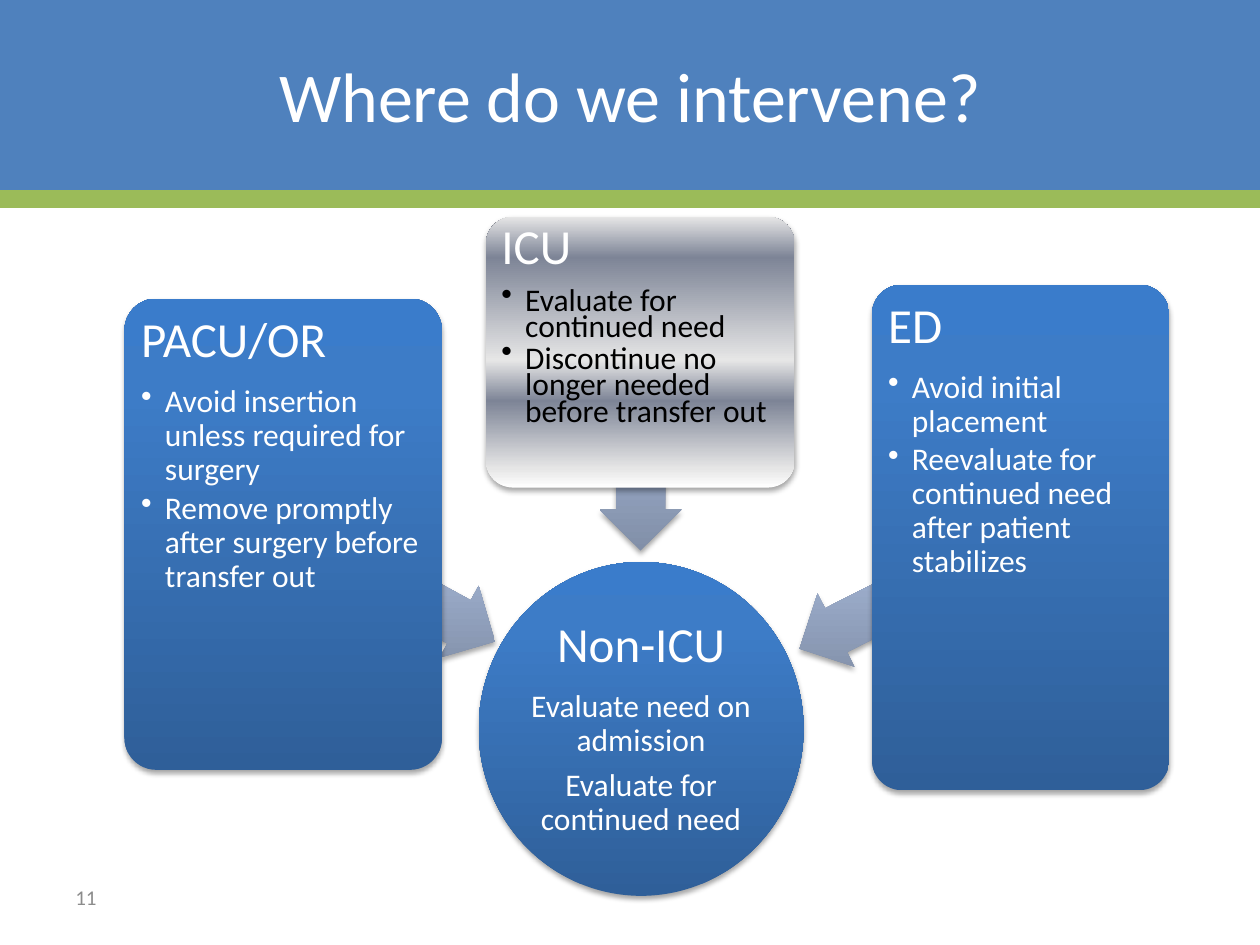
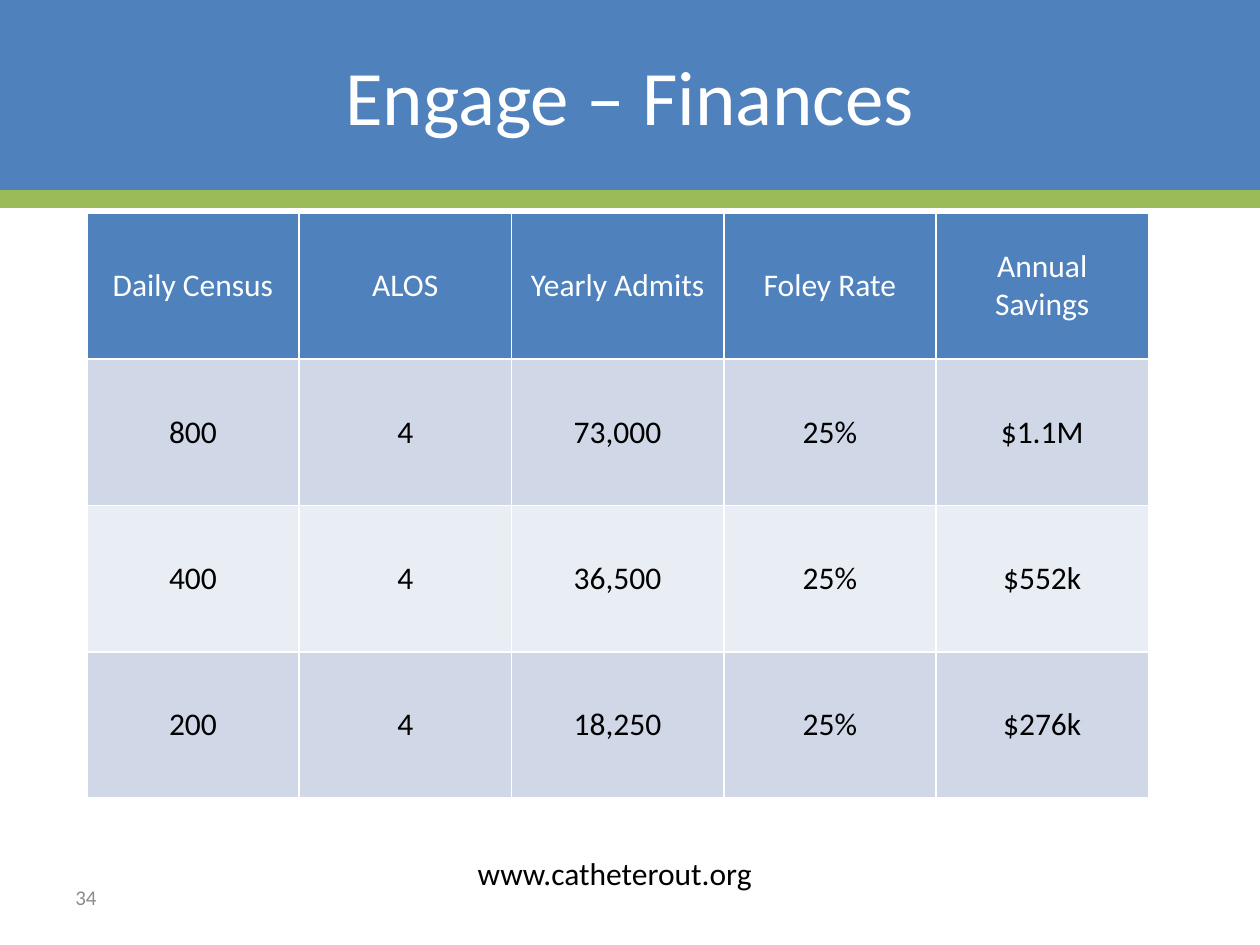
import pptx
import pptx.dml.color
import pptx.enum.shapes
import pptx.enum.text
import pptx.oxml
import pptx.oxml.ns
import pptx.util
from pptx.util import Cm, Pt

SHAPE = pptx.enum.shapes.MSO_SHAPE
ALIGN = pptx.enum.text.PP_ALIGN
ANCHOR = pptx.enum.text.MSO_ANCHOR

# Shared look
FONT = "Calibri"
WHITE, BLACK, GREY = "FFFFFF", "000000", "8C8C8C"
BAND_BLUE, BAND_GREEN = "4F81BD", "9BBB59"
ROW_FILLS = ["D0D8E8", "E9EDF4"]
SLIDE_WIDTH, SLIDE_HEIGHT, BAND_HEIGHT = Cm(25.4), Cm(19.05), Cm(4.01)

# Gradients run from bottom to top: (position in percent, colour)
BLUE = [(0, "2F5F99"), (80, "3D7CC7"), (100, "3A7CCB")]
STEEL = [(0, "818FA8"), (80, "A7B9DA"), (100, "A7BADC")]
SILVER = [(0, "FFFFFF"), (7, "E6E6E6"), (32, "7D8496"),
          (47, "E6E6E6"), (85, "7D8496"), (100, "E6E6E6")]

# Slide content; boxes are left, top, width, height in cm
INTERVENE = {"title": "Where do we intervene?", "title_size": 40, "number": "11"}
FINANCES = {"title": "Engage – Finances", "title_size": 44, "number": "34"}

TARGET = {
    "box": (9.65, 11.33, 6.55, 6.73), "heading": "Non-ICU",
    "items": ["Evaluate need on admission", "Evaluate for continued need"],
}
UNITS = [
    {"box": (2.51, 6.02, 6.4, 9.5), "heading": "PACU/OR",
     "items": ["Avoid insertion unless required for surgery",
               "Remove promptly after surgery before transfer out"],
     "arrow": (5.64, 11, 4.62, 1.65), "rotation": 208.6},
    {"box": (9.8, 4.37, 6.22, 5.46), "heading": "ICU",
     "items": ["Evaluate for continued need",
               "Discontinue no longer needed before transfer out"],
     "arrow": (10.92, 8.28, 3.99, 1.65), "rotation": 270,
     "gradient": SILVER, "item_color": BLACK, "line_spacing": 0.7},
    {"box": (17.58, 5.74, 5.99, 10.19), "heading": "ED",
     "items": ["Avoid initial placement",
               "Reevaluate for continued need after patient stabilizes"],
     "arrow": (15.85, 11.13, 4.98, 1.65), "rotation": 333.2},
]

SAVINGS = [
    ["Daily Census", "ALOS", "Yearly Admits", "Foley Rate", "Annual Savings"],
    ["800", "4", "73,000", "25%", "$1.1M"],
    ["400", "4", "36,500", "25%", "$552k"],
    ["200", "4", "18,250", "25%", "$276k"],
]
COLUMN_WIDTH, ROW_HEIGHT = Cm(4.28), Cm(2.95)
WEBSITE = "www.catheterout.org"


def rgb(color):
    return pptx.dml.color.RGBColor.from_string(color)


def xml(markup):
    """Parse one element of the drawing namespace."""
    tag, rest = markup[:-2].split(" ", 1) if markup.endswith("/>") else markup.split(" ", 1)
    end = "/>" if markup.endswith("/>") else ""
    return pptx.oxml.parse_xml(f"{tag} {pptx.oxml.ns.nsdecls('a')} {rest}{end}")


def format_paragraph(paragraph, size, color, align=ALIGN.LEFT):
    paragraph.alignment = align
    for run in paragraph.runs:
        run.font.name = FONT
        run.font.size = Pt(size)
        run.font.color.rgb = rgb(color)


def add_label(slide, text, box, size, color, align=ALIGN.LEFT, anchor=ANCHOR.TOP):
    frame = slide.shapes.add_textbox(*map(Cm, box)).text_frame
    frame.word_wrap = True
    frame.vertical_anchor = anchor
    frame.text = text
    format_paragraph(frame.paragraphs[0], size, color, align)


def add_gradient_shape(slide, kind, box, gradient, adjustments=()):
    """Add a borderless shape with an upward gradient and a soft shadow."""
    shape = slide.shapes.add_shape(kind, *map(Cm, box))
    for index, value in enumerate(adjustments):
        shape.adjustments[index] = value
    shape.line.fill.background()
    shape.fill.gradient()
    shape.fill.gradient_angle = 90
    properties = shape.element.spPr
    properties.find(pptx.oxml.ns.qn("a:gradFill")).set("rotWithShape", "0")
    stops = properties.find(".//" + pptx.oxml.ns.qn("a:gsLst"))
    stops.clear()
    for position, color in gradient:
        stops.append(xml(f'<a:gs pos="{position * 1000}"><a:srgbClr val="{color}"/></a:gs>'))
    shape.shadow.inherit = False
    properties.find(pptx.oxml.ns.qn("a:effectLst")).append(xml(
        '<a:outerShdw blurRad="39400" dist="22900" dir="5400000" rotWithShape="0">'
        '<a:srgbClr val="000000"><a:alpha val="35000"/></a:srgbClr></a:outerShdw>'))
    return shape


def fill_text(shape, unit, inset, align, anchor, bulleted):
    """Write a heading and its items into a shape."""
    frame = shape.text_frame
    frame.word_wrap = True
    frame.vertical_anchor = anchor
    frame.margin_left = frame.margin_right = Cm(inset)
    frame.margin_top = frame.margin_bottom = Cm(inset)
    frame.text = "\n".join([unit["heading"], *unit["items"]])
    for index, paragraph in enumerate(frame.paragraphs):
        is_item = index > 0
        size = 18 if is_item else 28
        color = unit.get("item_color", WHITE) if is_item else WHITE
        if is_item and bulleted:
            properties = paragraph._p.get_or_add_pPr()
            properties.set("marL", str(Cm(0.48)))
            properties.set("indent", str(-Cm(0.48)))
            properties.append(xml('<a:buChar char="•"/>'))
        paragraph.line_spacing = unit.get("line_spacing", 0.9)
        paragraph.space_after = Pt(size * (0.15 if is_item and bulleted else 0.35))
        format_paragraph(paragraph, size, color, align)


def prepare_layout(presentation, layout):
    """Put the title place and the two-colour band on the layout."""
    title = layout.placeholders[0]
    title.left, title.top, title.width, title.height = 0, 0, SLIDE_WIDTH, Cm(3.81)
    slide = presentation.slides[0]
    band = slide.shapes.add_shape(SHAPE.RECTANGLE, 0, 0, SLIDE_WIDTH, BAND_HEIGHT)
    band.fill.solid()
    band.fill.fore_color.rgb = rgb(BAND_BLUE)
    band.line.fill.background()
    band.shadow.inherit = False
    rule = slide.shapes.add_connector(
        pptx.enum.shapes.MSO_CONNECTOR.STRAIGHT, 0, BAND_HEIGHT, SLIDE_WIDTH, BAND_HEIGHT)
    rule.line.color.rgb = rgb(BAND_GREEN)
    rule.line.width = Pt(10)
    rule.element.spPr.append(xml("<a:effectLst />"))
    for position, part in enumerate([band, rule], start=2):
        layout.shapes.element.insert(position, part.element)


def add_title_and_number(slide, content):
    slide.shapes.title.text_frame.text = content["title"]
    format_paragraph(slide.shapes.title.text_frame.paragraphs[0],
                     content["title_size"], WHITE, ALIGN.CENTER)
    add_label(slide, content["number"], (1.27, 17.58, 5.92, 1.02), 12, GREY,
              anchor=ANCHOR.MIDDLE)


def build_intervene(slide):
    add_title_and_number(slide, INTERVENE)
    circle = add_gradient_shape(slide, SHAPE.OVAL, TARGET["box"], BLUE)
    fill_text(circle, TARGET, 0.05, ALIGN.CENTER, ANCHOR.MIDDLE, bulleted=False)
    for unit in UNITS:
        arrow = add_gradient_shape(slide, SHAPE.LEFT_ARROW, unit["arrow"], STEEL, (0.6, 0.5))
        arrow.rotation = unit["rotation"]
        card = add_gradient_shape(slide, SHAPE.ROUNDED_RECTANGLE, unit["box"],
                                  unit.get("gradient", BLUE), (0.1,))
        fill_text(card, unit, 0.15, ALIGN.LEFT, ANCHOR.TOP, bulleted=True)


def build_finances(slide):
    add_title_and_number(slide, FINANCES)
    rows, columns = len(SAVINGS), len(SAVINGS[0])
    table = slide.shapes.add_table(rows, columns, Cm(1.75), Cm(4.29),
                                   COLUMN_WIDTH * columns, ROW_HEIGHT * rows).table
    for row_index, values in enumerate(SAVINGS):
        is_header = row_index == 0
        fill = BAND_BLUE if is_header else ROW_FILLS[(row_index - 1) % 2]
        for column_index, value in enumerate(values):
            cell = table.cell(row_index, column_index)
            cell.text = value
            cell.vertical_anchor = ANCHOR.MIDDLE
            cell.fill.solid()
            cell.fill.fore_color.rgb = rgb(fill)
            format_paragraph(cell.text_frame.paragraphs[0], 18,
                             WHITE if is_header else BLACK, ALIGN.CENTER)
            for position, side in enumerate("LRTB"):
                cell._tc.get_or_add_tcPr().insert(position, xml(
                    f'<a:ln{side} w="{Pt(1)}"><a:solidFill><a:srgbClr val="{WHITE}"/>'
                    f'</a:solidFill></a:ln{side}>'))
    add_label(slide, WEBSITE, (8.05, 17.09, 8.69, 1.02), 18, BLACK, ALIGN.CENTER)


def main():
    presentation = pptx.Presentation()
    presentation.slide_width, presentation.slide_height = SLIDE_WIDTH, SLIDE_HEIGHT
    layout = presentation.slide_layouts[5]
    slides = [presentation.slides.add_slide(layout) for _ in range(2)]
    prepare_layout(presentation, layout)
    build_intervene(slides[0])
    build_finances(slides[1])
    presentation.save("out.pptx")


if __name__ == "__main__":
    main()
